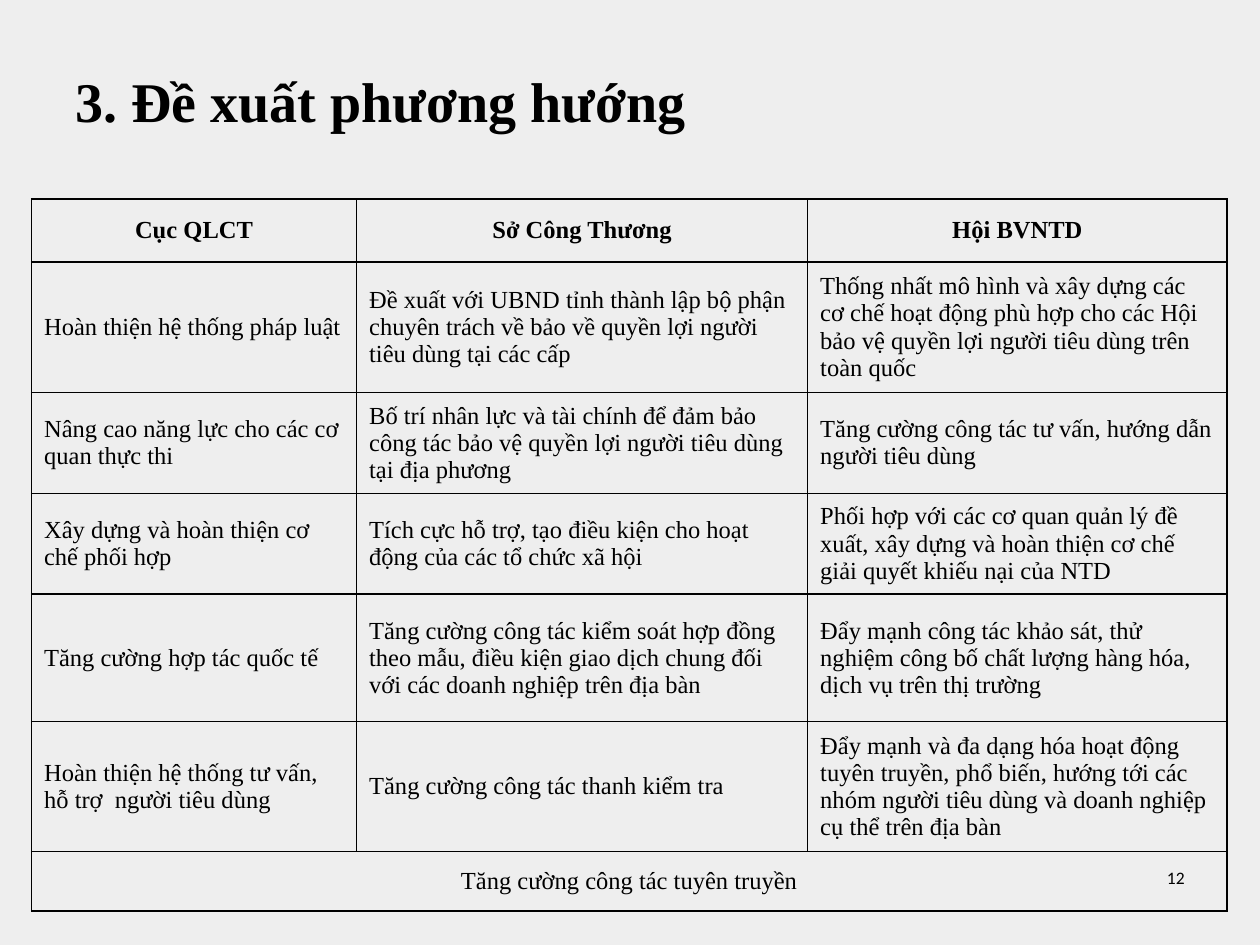
from lxml.etree import SubElement
from pptx import Presentation
from pptx.dml.color import RGBColor
from pptx.enum.text import MSO_ANCHOR, PP_ALIGN
from pptx.oxml.ns import qn
from pptx.util import Inches, Pt

BACKGROUND = RGBColor(0xEE, 0xEE, 0xEE)
BLACK = RGBColor(0x00, 0x00, 0x00)

COLUMN_WIDTHS = [2.58, 3.58, 3.33]
ROW_HEIGHTS = [0.5, 1.01, 0.74, 0.74, 1.01, 1.01, 0.47]
ROWS = [
    ["Cục QLCT", "Sở Công Thương", "Hội BVNTD"],
    ["Hoàn thiện hệ thống pháp luật",
     "Đề xuất với UBND tỉnh thành lập bộ phận chuyên trách về bảo về quyền lợi "
     "người tiêu dùng tại các cấp",
     "Thống nhất mô hình và xây dựng các cơ chế hoạt động phù hợp cho các Hội "
     "bảo vệ quyền lợi người tiêu dùng trên toàn quốc"],
    ["Nâng cao năng lực cho các cơ quan thực thi",
     "Bố trí nhân lực và tài chính để đảm bảo công tác bảo vệ quyền lợi "
     "người tiêu dùng tại địa phương",
     "Tăng cường công tác tư vấn, hướng dẫn người tiêu dùng"],
    ["Xây dựng và hoàn thiện cơ chế phối hợp",
     "Tích cực hỗ trợ, tạo điều kiện cho hoạt động của các tổ chức xã hội",
     "Phối hợp với các cơ quan quản lý đề xuất, xây dựng và hoàn thiện cơ chế "
     "giải quyết khiếu nại của NTD"],
    ["Tăng cường hợp tác quốc tế",
     "Tăng cường công tác kiểm soát hợp đồng theo mẫu, điều kiện giao dịch chung "
     "đối với các doanh nghiệp trên địa bàn",
     "Đẩy mạnh công tác khảo sát, thử nghiệm công bố chất lượng hàng hóa, "
     "dịch vụ trên thị trường"],
    ["Hoàn thiện hệ thống tư vấn, hỗ trợ  người tiêu dùng",
     "Tăng cường công tác thanh kiểm tra",
     "Đẩy mạnh và đa dạng hóa hoạt động tuyên truyền, phổ biến, hướng tới các "
     "nhóm người tiêu dùng và doanh nghiệp cụ thể trên địa bàn"],
    ["Tăng cường công tác tuyên truyền"],
]


def write_text(text_frame, text, size=14, bold=False, font="Times New Roman",
               align=PP_ALIGN.LEFT):
    text_frame.word_wrap = True
    paragraph = text_frame.paragraphs[0]
    paragraph.alignment = align
    run = paragraph.add_run()
    run.text = text
    run.font.name = font
    run.font.size = Pt(size)
    run.font.bold = bold
    run.font.color.rgb = BLACK


def format_cell(cell):
    cell.vertical_anchor = MSO_ANCHOR.MIDDLE
    properties = cell._tc.get_or_add_tcPr()
    for side in ("a:lnL", "a:lnR", "a:lnT", "a:lnB"):
        line = SubElement(properties, qn(side), w=str(Pt(1)))
        line_fill = SubElement(line, qn("a:solidFill"))
        SubElement(line_fill, qn("a:srgbClr"), val=str(BLACK))
    cell.fill.background()


presentation = Presentation()
presentation.slide_width = Inches(10)
presentation.slide_height = Inches(7.5)
slide = presentation.slides.add_slide(presentation.slide_layouts[6])
slide.background.fill.solid()
slide.background.fill.fore_color.rgb = BACKGROUND

# Title
title = slide.shapes.add_textbox(Inches(0.5), Inches(0.17), Inches(9), Inches(1.25))
title.text_frame.vertical_anchor = MSO_ANCHOR.MIDDLE
write_text(title.text_frame, "3. Đề xuất phương hướng", size=32, bold=True,
           align=PP_ALIGN.JUSTIFY)

# Table of proposals, one column per body
table = slide.shapes.add_table(
    len(ROWS), len(COLUMN_WIDTHS), Inches(0.25), Inches(1.58),
    Inches(sum(COLUMN_WIDTHS)), Inches(sum(ROW_HEIGHTS))).table
table.horz_banding = False
for column, width in zip(table.columns, COLUMN_WIDTHS):
    column.width = Inches(width)
for row, height in zip(table.rows, ROW_HEIGHTS):
    row.height = Inches(height)
    for cell in row.cells:
        format_cell(cell)

# The last row is shared by all three bodies
last_row = len(ROWS) - 1
table.cell(last_row, 0).merge(table.cell(last_row, len(COLUMN_WIDTHS) - 1))

for row_index, texts in enumerate(ROWS):
    centred = row_index in (0, last_row)
    for column_index, text in enumerate(texts):
        write_text(table.cell(row_index, column_index).text_frame, text,
                   bold=row_index == 0,
                   align=PP_ALIGN.CENTER if centred else PP_ALIGN.LEFT)

# Slide number
number = slide.shapes.add_textbox(Inches(7.17), Inches(6.83), Inches(2.33), Inches(0.52))
write_text(number.text_frame, "12", size=10, font="Calibri", align=PP_ALIGN.RIGHT)

presentation.save("out.pptx")
